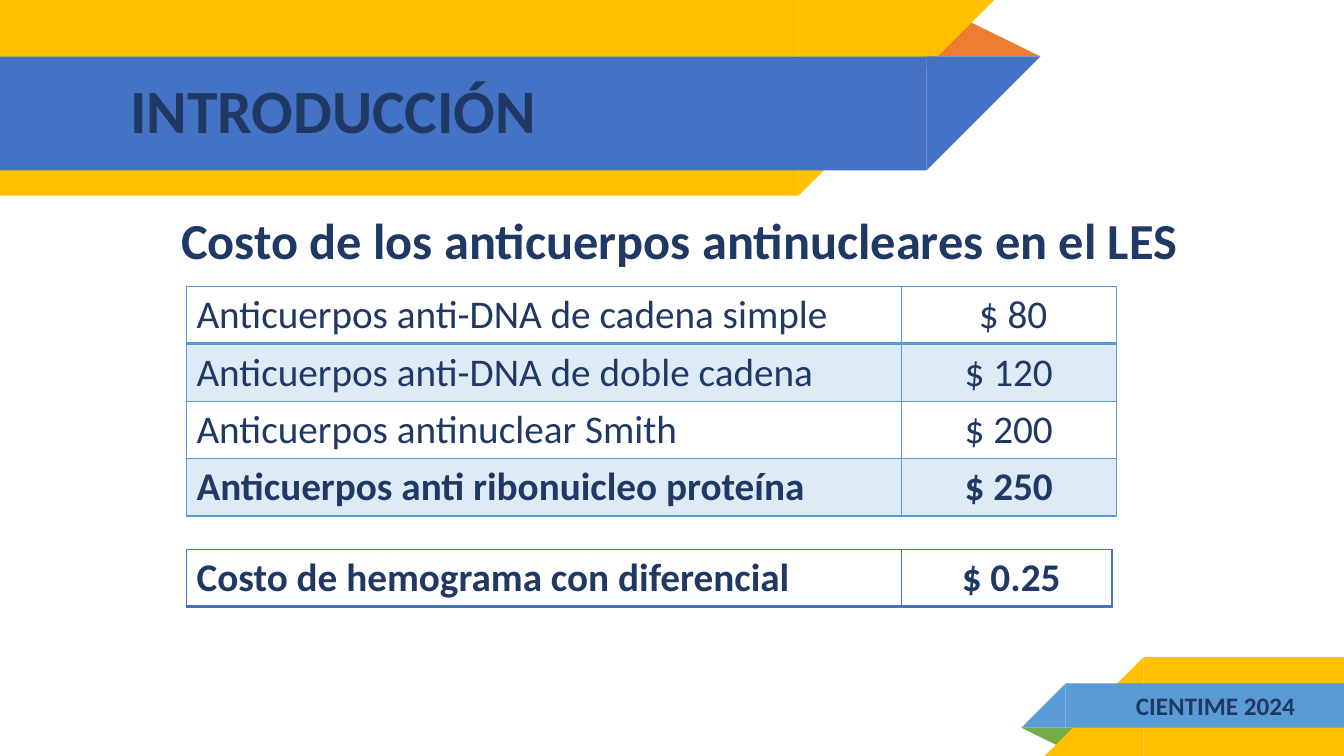
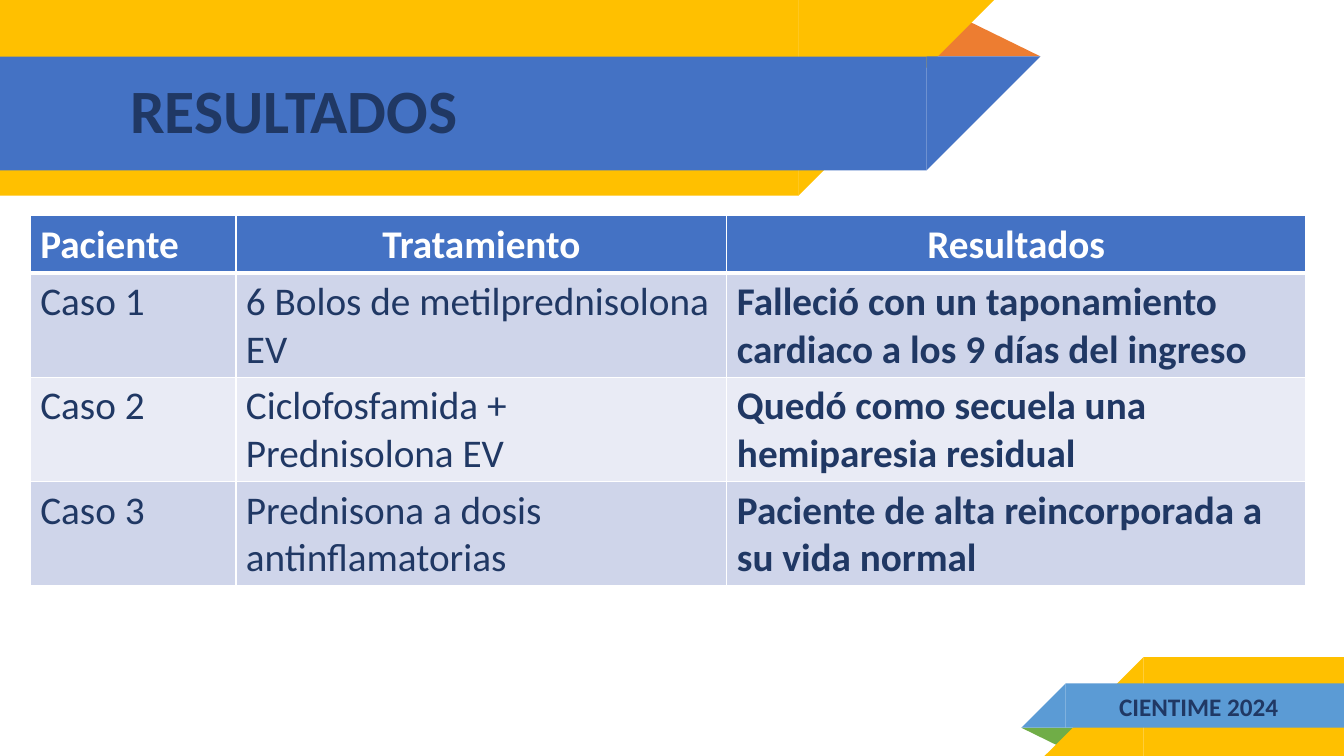
from pptx import Presentation
from pptx.dml.color import RGBColor
from pptx.enum.shapes import MSO_SHAPE as Preset
from pptx.enum.text import MSO_ANCHOR as Anchor, MSO_AUTO_SIZE as AutoSize, PP_ALIGN as Align
from pptx.oxml import parse_xml
from pptx.oxml.ns import nsdecls
from pptx.util import Inches, Pt

WIDTH, HEIGHT = 13.33, 7.5
FONT = "Calibri"
NAVY = RGBColor(0x20, 0x38, 0x64)
WHITE = RGBColor(0xFF, 0xFF, 0xFF)
GOLD = RGBColor(0xFF, 0xC0, 0x00)
BLUE = RGBColor(0x44, 0x72, 0xC4)
SKY = RGBColor(0x5B, 0x9B, 0xD5)
ORANGE = RGBColor(0xED, 0x7D, 0x31)
GREEN = RGBColor(0x70, 0xAD, 0x47)
PALE_SKY = RGBColor(0xDE, 0xEB, 0xF7)
PALE_BLUE = RGBColor(0xCF, 0xD5, 0xEA)
PALEST_BLUE = RGBColor(0xE9, 0xEB, 0xF5)

TITLE_BOX = (1.19, 0.57, 7.67, 1.12)
ROW = 0.57
TALL_ROW = 1.03
FOLD_PEAK = 0.32


def inches(box):
    return [Inches(length) for length in box]


def style_para(para, size, bold=True, color=NAVY, align=Align.LEFT):
    para.alignment = align
    font = para.font
    font.name, font.size, font.bold = FONT, Pt(size), bold
    font.color.rgb = color


def add_part(group, preset, box, color, turn=0, mirror=False):
    shape = group.shapes.add_shape(preset, *inches(box))
    shape.shadow.inherit = False
    shape.fill.solid()
    shape.fill.fore_color.rgb = color
    shape.line.fill.background()
    shape.rotation = turn
    if mirror:
        shape.element.spPr.xfrm.set("flipH", "1")
    return shape


def add_fold(group, box, color, turn=0):
    add_part(group, Preset.ISOSCELES_TRIANGLE, box, color, turn).adjustments[0] = FOLD_PEAK


def add_top_band(group, top, height, length, color):
    """Band from the left edge, ending in a 45 degree cut with its tip at the top."""
    add_part(group, Preset.RECTANGLE, (0, top, length, height), color, 180, True)
    add_part(group, Preset.RIGHT_TRIANGLE, (length, top, height, height), color, 180, True)


def add_bottom_band(group, top, height, start, color):
    """Band to the right edge, starting in a 45 degree cut with its tip at the bottom."""
    add_part(group, Preset.RECTANGLE, (start, top, WIDTH - start, height), color, 0, True)
    add_part(group, Preset.RIGHT_TRIANGLE, (start - height, top, height, height), color, 0, True)


def decorate_layout(layout, page):
    """Draw the bands on a page, then move them behind the layout's title."""
    for holder in list(layout.placeholders)[1:]:
        holder.element.getparent().remove(holder.element)
    title = layout.placeholders[0]
    title.left, title.top, title.width, title.height = inches(TITLE_BOX)

    header = page.shapes.add_group_shape()
    add_fold(header, (9.18, 0.18, 1.14, 0.38), ORANGE)
    add_top_band(header, 0, 1.94, 7.92, GOLD)
    add_top_band(header, 0.56, 1.13, 9.19, BLUE)
    footer = page.shapes.add_group_shape()
    add_fold(footer, (10.13, 7.22, 0.57, 0.19), GREEN, 180)
    add_bottom_band(footer, 6.52, 0.98, 11.34, GOLD)
    add_bottom_band(footer, 6.78, 0.44, 10.57, SKY)
    for place, group in enumerate((header, footer), 2):
        layout.shapes.element.insert(place, group.element)


def set_title(page, text):
    frame = page.shapes.title.text_frame
    frame.text = text
    frame.auto_size = AutoSize.NONE
    frame.vertical_anchor = Anchor.MIDDLE
    frame.margin_left = frame.margin_right = Inches(0.1)
    frame.margin_top = frame.margin_bottom = Inches(0.1)
    para = frame.paragraphs[0]
    para.line_spacing = 0.9
    style_para(para, 44)


def add_text(page, box, text, size, align=Align.CENTER):
    frame = page.shapes.add_textbox(*inches(box)).text_frame
    frame.word_wrap = True
    frame.auto_size = AutoSize.SHAPE_TO_FIT_TEXT
    frame.text = text
    style_para(frame.paragraphs[0], size, align=align)


def set_borders(cell, color, bottom_width):
    props = cell._tc.get_or_add_tcPr()
    widths = {"lnL": 1, "lnR": 1, "lnT": 1, "lnB": bottom_width}
    for place, (side, width) in enumerate(widths.items()):
        props.insert(place, parse_xml(
            f'<a:{side} {nsdecls("a")} w="{Pt(width)}"><a:solidFill>'
            f'<a:srgbClr val="{color}"/></a:solidFill></a:{side}>'))


def add_grid(page, corner, columns, heights, rows, border, style_cell, first_bottom):
    """style_cell(row, column) gives the fill, bold, colour and alignment."""
    box = (*corner, sum(columns), sum(heights))
    table = page.shapes.add_table(len(rows), len(columns), *inches(box)).table
    table.first_row = table.horz_banding = False
    for column, width in zip(table.columns, columns):
        column.width = Inches(width)
    for row, height in zip(table.rows, heights):
        row.height = Inches(height)
    for r, texts in enumerate(rows):
        for c, text in enumerate(texts):
            cell = table.cell(r, c)
            fill, bold, color, align = style_cell(r, c)
            cell.text = text
            style_para(cell.text_frame.paragraphs[0], 28, bold, color, align)
            cell.fill.solid()
            cell.fill.fore_color.rgb = fill
            set_borders(cell, border, first_bottom if r == 0 else 1)


def price_style(bold_row):
    def style(row, column):
        fill = PALE_SKY if row % 2 else WHITE
        return fill, row == bold_row, NAVY, Align.CENTER if column else Align.LEFT
    return style


def result_style(row, column):
    if row == 0:
        return BLUE, True, WHITE, Align.CENTER if column else Align.LEFT
    return PALE_BLUE if row % 2 else PALEST_BLUE, column == 2, NAVY, Align.LEFT


def fill_cost_page(page):
    set_title(page, "INTRODUCCIÓN")
    add_text(page, (0.31, 2.03, 12.86, 0.71),
             "Costo de los anticuerpos antinucleares en el LES", 36)
    add_text(page, (10.94, 6.8, 2.23, 0.4), "CIENTIME 2024", 18)
    prices = [
        ("Anticuerpos anti-DNA de cadena simple", " $ 80"),
        ("Anticuerpos anti-DNA de doble cadena", "$ 120"),
        ("Anticuerpos antinuclear Smith", "$ 200"),
        ("Anticuerpos anti ribonuicleo proteína", "$ 250"),
    ]
    add_grid(page, (1.85, 2.84), (7.09, 2.13), [ROW] * 4, prices,
             SKY, price_style(bold_row=3), 2.25)
    add_grid(page, (1.85, 5.45), (7.09, 2.09), [ROW],
             [("Costo de hemograma con diferencial", " $ 0.25")],
             BLUE, price_style(bold_row=0), 2.25)


def fill_results_page(page):
    set_title(page, "RESULTADOS")
    add_text(page, (11, 6.81, 2.09, 0.4), "CIENTIME 2024", 18, Align.LEFT)
    results = [
        ("Paciente", "Tratamiento", "Resultados"),
        ("Caso 1", "6 Bolos de metilprednisolona EV",
         "Falleció con un taponamiento cardiaco a los 9 días del ingreso"),
        ("Caso 2", "Ciclofosfamida + Prednisolona EV",
         "Quedó como secuela una hemiparesia residual"),
        ("Caso 3", "Prednisona a dosis antinflamatorias",
         "Paciente de alta reincorporada a su vida normal"),
    ]
    add_grid(page, (0.3, 2.14), (2.04, 4.87, 5.74), [ROW] + [TALL_ROW] * 3,
             results, WHITE, result_style, 3)


def main():
    deck = Presentation()
    deck.slide_width, deck.slide_height = Inches(WIDTH), Inches(HEIGHT)
    layout = deck.slide_layouts.get_by_name("Title Only")
    cost_page, results_page = [deck.slides.add_slide(layout) for _ in range(2)]
    decorate_layout(layout, cost_page)
    fill_cost_page(cost_page)
    fill_results_page(results_page)
    deck.save("out.pptx")


if __name__ == "__main__":
    main()
